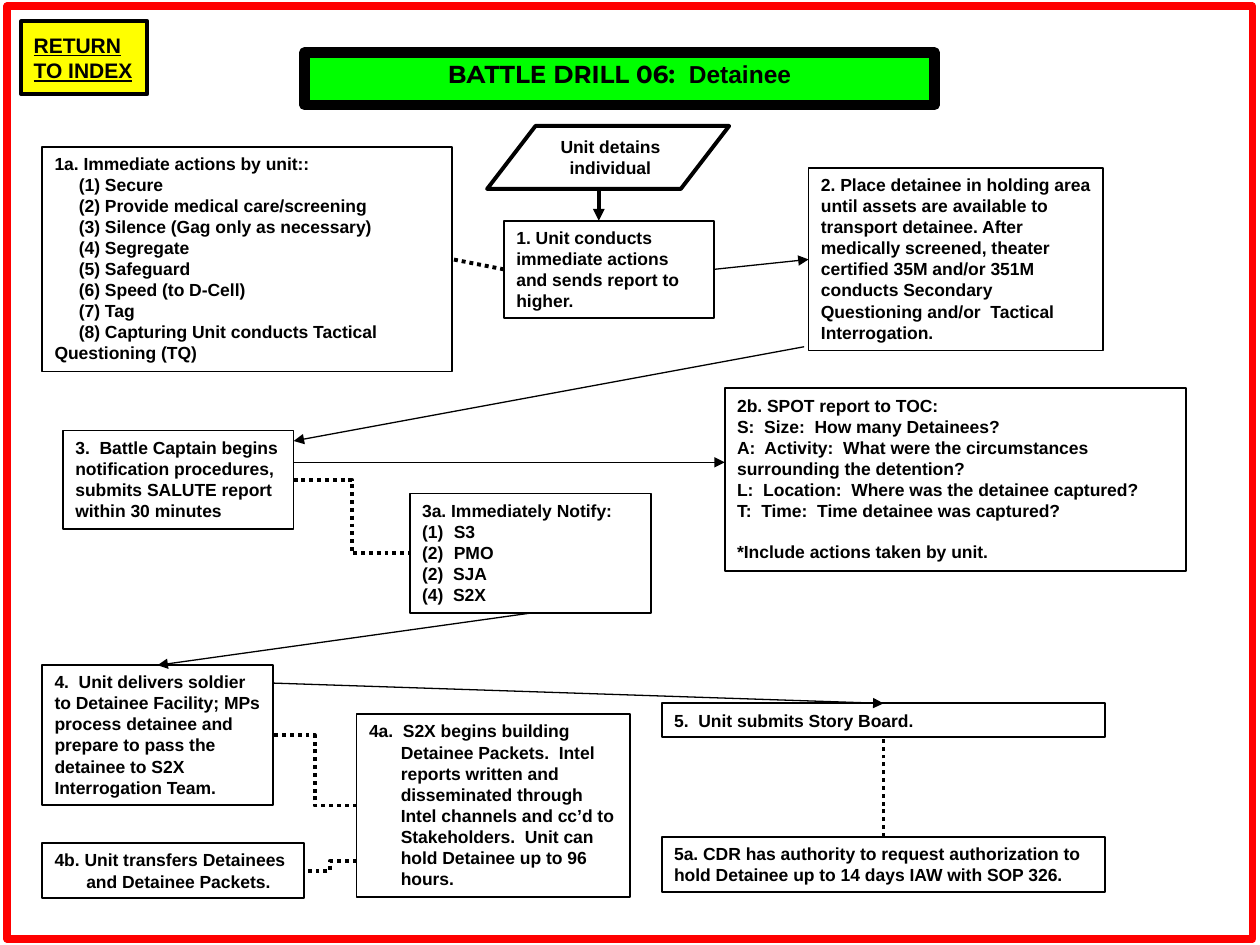
from lxml import etree
from pptx import Presentation
from pptx.dml.color import RGBColor
from pptx.enum.dml import MSO_LINE
from pptx.enum.shapes import MSO_CONNECTOR, MSO_SHAPE
from pptx.enum.text import MSO_ANCHOR, PP_ALIGN
from pptx.oxml.ns import qn
from pptx.util import Cm, Pt

BLACK = RGBColor(0, 0, 0)
WHITE = RGBColor(255, 255, 255)
RED = RGBColor(255, 0, 0)
YELLOW = RGBColor(255, 255, 0)
GREEN = RGBColor(0, 255, 0)
RECTANGLE = MSO_SHAPE.RECTANGLE
PARALLELOGRAM = MSO_SHAPE.FLOWCHART_DATA
STRAIGHT = MSO_CONNECTOR.STRAIGHT
ELBOW = MSO_CONNECTOR.ELBOW
DOTTED = MSO_LINE.ROUND_DOT
LEFT, CENTER = PP_ALIGN.LEFT, PP_ALIGN.CENTER
TOP, MIDDLE = MSO_ANCHOR.TOP, MSO_ANCHOR.MIDDLE
TOP_SIDE, LEFT_SIDE, BOTTOM_SIDE, RIGHT_SIDE = range(4)
HANGING = 0.64

STEPS = {
    "1": ((10.16, 4.45, 4.23, 1.96),
          ["1. Unit conducts immediate actions and sends report to higher."]),
    "1a": ((0.85, 2.96, 8.26, 4.53),
           ["1a. Immediate actions by unit::",
            "(1) Secure",
            "(2) Provide medical care/screening",
            "(3) Silence (Gag only as necessary)",
            "(4) Segregate",
            "(5) Safeguard",
            "(6) Speed (to D-Cell)",
            "(7) Tag",
            "(8) Capturing Unit conducts Tactical Questioning (TQ)"]),
    "2": ((16.3, 3.39, 5.93, 3.68),
          ["2. Place detainee in holding area until assets are available to "
           "transport detainee. After medically screened, theater certified 35M "
           "and/or 351M conducts Secondary Questioning and/or  Tactical "
           "Interrogation."]),
    "2b": ((14.61, 7.83, 9.3, 3.68),
           ["2b. SPOT report to TOC:",
            "S:  Size:  How many Detainees?",
            "A:  Activity:  What were the circumstances surrounding the detention?",
            "L:  Location:  Where was the detainee captured?",
            "T:  Time:  Time detainee was captured?",
            "*Include actions taken by unit."]),
    "3": ((1.27, 8.68, 4.65, 1.98),
          ["3.  Battle Captain begins notification procedures, submits SALUTE "
           "report within 30 minutes"]),
    "3a": ((8.26, 9.95, 4.87, 2.41),
           ["3a. Immediately Notify:", "S3", "PMO", "(2)  SJA", "(4)  S2X"]),
    "4": ((0.85, 13.41, 4.65, 2.82),
          ["4.  Unit delivers soldier to Detainee Facility; MPs process detainee "
           "and prepare to pass the detainee to S2X Interrogation Team."]),
    "4a": ((7.19, 14.4, 5.51, 3.68),
           ["4a.  S2X begins building Detainee Packets.  Intel reports written "
            "and disseminated through Intel channels and cc’d to Stakeholders.  "
            "Unit can hold Detainee up to 96 hours."]),
    "4b": ((0.85, 17, 5.28, 1.11),
           ["4b. Unit transfers Detainees and Detainee Packets."]),
    "5": ((13.34, 14.18, 8.94, 0.68), ["5.  Unit submits Story Board."]),
    "5a": ((13.34, 16.87, 8.94, 1.11),
           ["5a. CDR has authority to request authorization to hold Detainee up "
            "to 14 days IAW with SOP 326."]),
}


def write(shape, lines, size=10, align=LEFT, anchor=TOP, wrap=True):
    frame = shape.text_frame
    frame.word_wrap = wrap
    frame.vertical_anchor = anchor
    frame.text = "\n".join(lines)
    for paragraph in frame.paragraphs:
        paragraph.alignment = align
        for run in paragraph.runs:
            run.font.name = "Arial"
            run.font.size = Pt(size)
            run.font.bold = True
            run.font.color.rgb = BLACK
    return frame.paragraphs


def add_outline(slide, box, width=1, fill=None, color=BLACK, kind=RECTANGLE):
    shape = slide.shapes.add_shape(kind, *map(Cm, box))
    shape.shadow.inherit = False
    if fill is None:
        shape.fill.background()
    else:
        shape.fill.solid()
        shape.fill.fore_color.rgb = fill
    shape.line.color.rgb = color
    shape.line.width = Pt(width)
    return shape


def indent(paragraph, margin, first_line):
    properties = paragraph._p.get_or_add_pPr()
    properties.set("marL", str(Cm(margin)))
    properties.set("indent", str(Cm(first_line)))
    return properties


def number(paragraph):
    properties = indent(paragraph, HANGING, -HANGING)
    etree.SubElement(properties, qn("a:buAutoNum"), type="arabicParenBoth")


def link(slide, begin, end, kind=STRAIGHT, width=0.75, dotted=False):
    points = [(0, 0) if hasattr(place[0], "shape_id") else place
              for place in (begin, end)]
    connector = slide.shapes.add_connector(
        kind, *(Cm(value) for point in points for value in point))
    if hasattr(begin[0], "shape_id"):
        connector.begin_connect(*begin)
    if hasattr(end[0], "shape_id"):
        connector.end_connect(*end)
    connector.line.color.rgb = BLACK
    connector.line.width = Pt(width)
    if dotted:
        connector.line.dash_style = DOTTED
    else:
        etree.SubElement(connector.line._get_or_add_ln(), qn("a:tailEnd"),
                         type="triangle")
    etree.SubElement(connector._element.spPr, qn("a:effectLst"))


def add_header(slide):
    add_outline(slide, (0.15, 0.13, 25.1, 18.8), 4.5, color=RED)
    button = add_outline(slide, (0.43, 0.43, 2.54, 1.47), 2.25, YELLOW)
    for paragraph in write(button, ["RETURN", "TO INDEX"], 12,
                           anchor=MIDDLE, wrap=False):
        paragraph.runs[0].font.underline = True
    banner = add_outline(slide, (6.14, 1.06, 12.7, 1.06), 6, GREEN)
    title = write(banner, ["BATTLE DRILL 06:"], 14, CENTER)[0]
    title.runs[0].font.name = "Montserrat"
    topic = title.add_run()
    topic.text = "  Detainee"
    topic.font.name = "Arial"
    topic.font.size = Pt(14)
    topic.font.bold = True
    topic.font.color.rgb = BLACK


def add_trigger(slide):
    caption = slide.shapes.add_textbox(Cm(10.54), Cm(2.62), Cm(3.53), Cm(1.1))
    write(caption, ["Unit detains", "individual"], align=CENTER)
    add_outline(slide, (9.82, 2.54, 4.88, 1.27), 2.25, kind=PARALLELOGRAM)


def add_steps(slide):
    steps, texts = {}, {}
    for step, (box, lines) in STEPS.items():
        steps[step] = add_outline(slide, box, fill=WHITE if step == "1a" else None)
        texts[step] = write(steps[step], lines)
    for action in texts["1a"][1:]:
        indent(action, 0, 0.49)
    for paragraph in (*texts["3a"], *texts["4a"], *texts["4b"]):
        indent(paragraph, HANGING, -HANGING)
    for contact in texts["3a"][1:3]:
        number(contact)
    texts["2b"][-1].space_before = Pt(11.5)
    return steps


def add_links(slide, steps):
    link(slide, (12.07, 3.81), (12.07, 4.45), width=2.25)
    link(slide, (steps["1"], RIGHT_SIDE), (steps["2"], LEFT_SIDE))
    link(slide, (16.21, 6.99), (5.92, 8.89))
    link(slide, (5.92, 9.32), (14.61, 9.32))
    link(slide, (steps["3a"], BOTTOM_SIDE), (steps["4"], TOP_SIDE))
    link(slide, (5.5, 13.77), (steps["5"], TOP_SIDE))
    for begin, end, kind in (
        ((steps["1"], LEFT_SIDE), (steps["1a"], RIGHT_SIDE), STRAIGHT),
        ((steps["3"], RIGHT_SIDE), (steps["3a"], LEFT_SIDE), ELBOW),
        ((steps["4a"], LEFT_SIDE), (steps["4"], RIGHT_SIDE), ELBOW),
        ((7.19, 17.35), (6.13, 17.55), ELBOW),
        ((steps["5a"], TOP_SIDE), (steps["5"], BOTTOM_SIDE), STRAIGHT),
    ):
        link(slide, begin, end, kind, 2.25, dotted=True)


def main():
    deck = Presentation()
    deck.slide_width, deck.slide_height = Cm(25.4), Cm(19.05)
    slide = deck.slides.add_slide(deck.slide_layouts[6])
    add_header(slide)
    add_trigger(slide)
    add_links(slide, add_steps(slide))
    deck.save("out.pptx")


if __name__ == "__main__":
    main()
